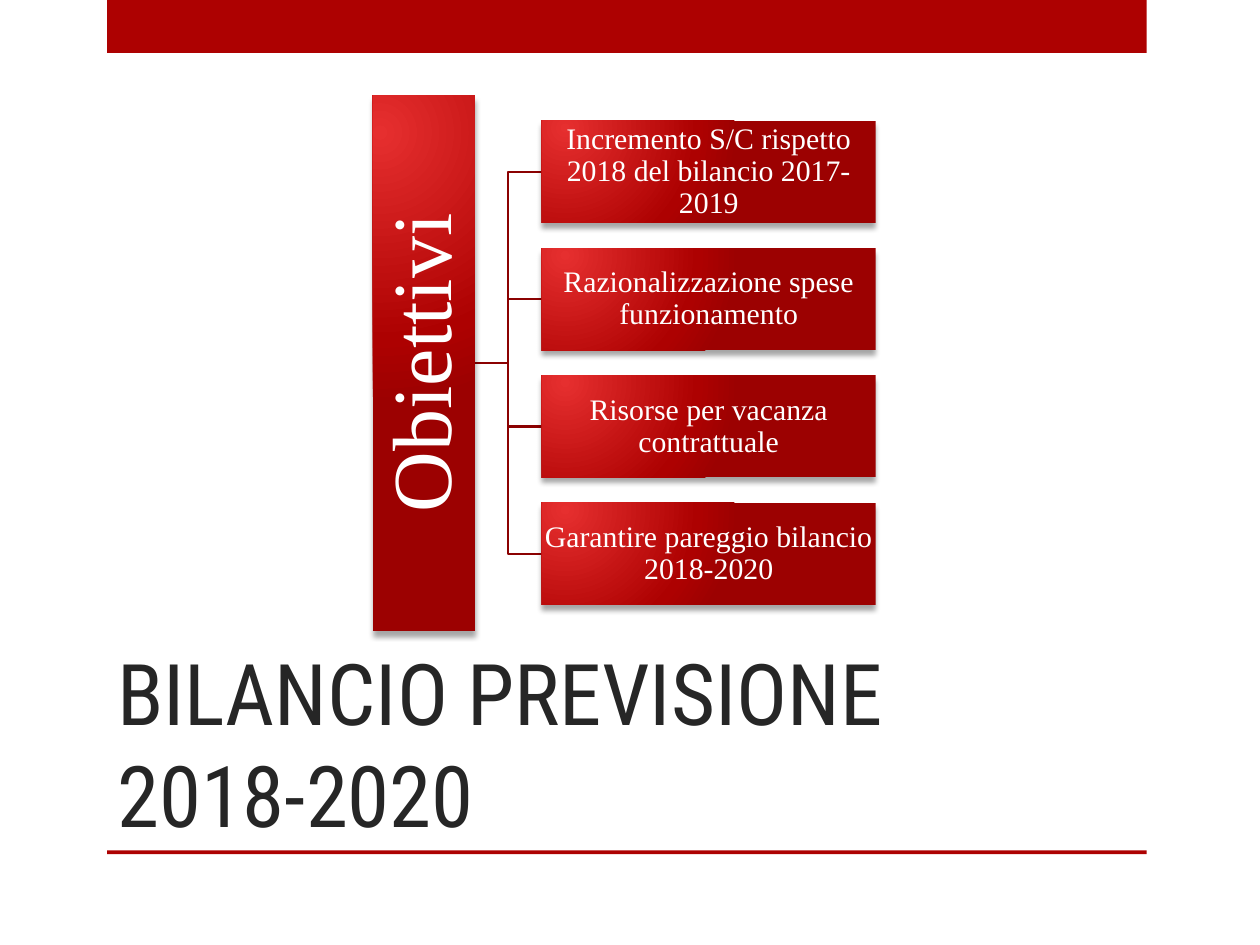
import dataclasses

import lxml.etree
import pptx
import pptx.dml.color
import pptx.enum.shapes
import pptx.enum.text
import pptx.oxml
import pptx.oxml.ns
import pptx.util

CELL = pptx.util.Inches(0.1)
COLUMNS, ROWS = 100, 75
COLORS = {
    "accent": "AD0101",
    "glow": "E62F2F",
    "deep": "9C0101",
    "branch": "8B0101",
    "title": "262626",
    "label": "FFFFFF",
    "shadow": "000000",
}
GRADIENT = ((0, "glow"), (76, "accent"), (100, "deep"))
OBJECTIVES = (
    "Incremento S/C rispetto 2018 del bilancio 2017-2019",
    "Razionalizzazione spese funzionamento",
    "Risorse per vacanza contrattuale",
    "Garantire pareggio bilancio 2018-2020",
)
BOX_LEFT, BOX_TOP, BOX_WIDTH, BOX_HEIGHT, BOX_PITCH = 43, 9.6, 26.5, 8.1, 10.1
ROOT_LENGTH, ROOT_CENTER, ROOT_EDGE = 42.5, 33.65, 37.7
TREE_MIDDLE = BOX_TOP + (BOX_PITCH * (len(OBJECTIVES) - 1) + BOX_HEIGHT) / 2


@dataclasses.dataclass(frozen=True)
class Area:
    column: float
    row: float
    columns: float
    rows: float

    def emu(self) -> list[int]:
        return [cells(value) for value in dataclasses.astuple(self)]


@dataclasses.dataclass(frozen=True)
class Node:
    text: str
    area: Area
    size: float
    inset: float
    rotation: float = 0


def cells(count: float) -> int:
    return round(count * CELL)


def rgb(name: str) -> pptx.dml.color.RGBColor:
    return pptx.dml.color.RGBColor.from_string(COLORS[name])


def add_text(paragraph, text: str, font: str, size: float, color: str) -> None:
    run = paragraph.add_run()
    run.text = text
    run.font.name = font
    run.font.size = pptx.util.Pt(size)
    run.font.color.rgb = rgb(color)


def add_rectangle(slide, area: Area):
    rectangle = slide.shapes.add_shape(
        pptx.enum.shapes.MSO_SHAPE.RECTANGLE, *area.emu()
    )
    rectangle.shadow.inherit = False
    rectangle.line.fill.background()
    return rectangle


def add_bar(slide, area: Area) -> None:
    bar = add_rectangle(slide, area)
    bar.fill.solid()
    bar.fill.fore_color.rgb = rgb("accent")


def add_glow_and_shadow(shape) -> None:
    namespace = pptx.oxml.ns.nsdecls("a")
    stops = "".join(
        f'<a:gs pos="{share * 1000}"><a:srgbClr val="{COLORS[name]}"/></a:gs>'
        for share, name in GRADIENT
    )
    gradient = pptx.oxml.parse_xml(
        f'<a:gradFill {namespace} rotWithShape="1"><a:gsLst>{stops}</a:gsLst>'
        '<a:path path="circle">'
        '<a:fillToRect l="15000" t="15000" r="100000" b="100000"/>'
        "</a:path></a:gradFill>"
    )
    properties = shape.element.spPr
    properties.find(pptx.oxml.ns.qn("a:prstGeom")).addnext(gradient)
    effects = properties.find(pptx.oxml.ns.qn("a:effectLst"))
    distance = pptx.util.Pt(3)
    shadow = lxml.etree.SubElement(
        effects, pptx.oxml.ns.qn("a:outerShdw"),
        blurRad=str(distance), dist=str(distance), dir="5400000", rotWithShape="0",
    )
    color = lxml.etree.SubElement(
        shadow, pptx.oxml.ns.qn("a:srgbClr"), val=COLORS["shadow"]
    )
    lxml.etree.SubElement(color, pptx.oxml.ns.qn("a:alpha"), val="35000")


def add_node(slide, node: Node) -> None:
    box = add_rectangle(slide, node.area)
    box.rotation = node.rotation
    add_glow_and_shadow(box)
    frame = box.text_frame
    frame.word_wrap = True
    frame.vertical_anchor = pptx.enum.text.MSO_ANCHOR.MIDDLE
    inset = pptx.util.Inches(node.inset)
    frame.margin_left = frame.margin_right = inset
    frame.margin_top = frame.margin_bottom = inset
    label = frame.paragraphs[0]
    label.alignment = pptx.enum.text.PP_ALIGN.CENTER
    label.line_spacing = 0.9
    add_text(label, node.text, "Times New Roman", node.size, "label")


def add_branch(slide, target_row: float) -> None:
    elbow = (ROOT_EDGE + BOX_LEFT) / 2
    outline = slide.shapes.build_freeform(cells(ROOT_EDGE), cells(TREE_MIDDLE))
    corners = ((elbow, TREE_MIDDLE), (elbow, target_row), (BOX_LEFT, target_row))
    outline.add_line_segments(
        [(cells(column), cells(row)) for column, row in corners], close=False
    )
    branch = outline.convert_to_shape()
    branch.shadow.inherit = False
    branch.fill.background()
    branch.line.color.rgb = rgb("branch")
    branch.line.width = pptx.util.Pt(1.25)


def add_title(slide, text: str, area: Area) -> None:
    title = slide.shapes.title
    title.left, title.top, title.width, title.height = area.emu()
    frame = title.text_frame
    frame.word_wrap = True
    frame.auto_size = pptx.enum.text.MSO_AUTO_SIZE.NONE
    frame.vertical_anchor = pptx.enum.text.MSO_ANCHOR.BOTTOM
    heading = frame.paragraphs[0]
    heading.alignment = pptx.enum.text.PP_ALIGN.LEFT
    add_text(heading, text, "Roboto Condensed", 48.6, "title")


def main() -> None:
    presentation = pptx.Presentation()
    presentation.slide_width = cells(COLUMNS)
    presentation.slide_height = cells(ROWS)
    slide = presentation.slides.add_slide(presentation.slide_layouts[5])

    for row, rows in ((0, 4.2), (67.5, 0.3)):
        add_bar(slide, Area(8.5, row, 82.5, rows))
    add_title(slide, "BILANCIO PREVISIONE 2018-2020", Area(8.3, 50, 74.2, 17.5))

    box_rows = [BOX_TOP + index * BOX_PITCH for index in range(len(OBJECTIVES))]
    for row in box_rows:
        add_branch(slide, row + BOX_HEIGHT / 2)
    root_area = Area(
        ROOT_CENTER - ROOT_LENGTH / 2, TREE_MIDDLE - BOX_HEIGHT / 2,
        ROOT_LENGTH, BOX_HEIGHT,
    )
    add_node(slide, Node("Obiettivi", root_area, 48, 0.03, 270))
    for row, objective in zip(box_rows, OBJECTIVES):
        area = Area(BOX_LEFT, row, BOX_WIDTH, BOX_HEIGHT)
        add_node(slide, Node(objective, area, 17, 0.01))

    presentation.save("out.pptx")


if __name__ == "__main__":
    main()
